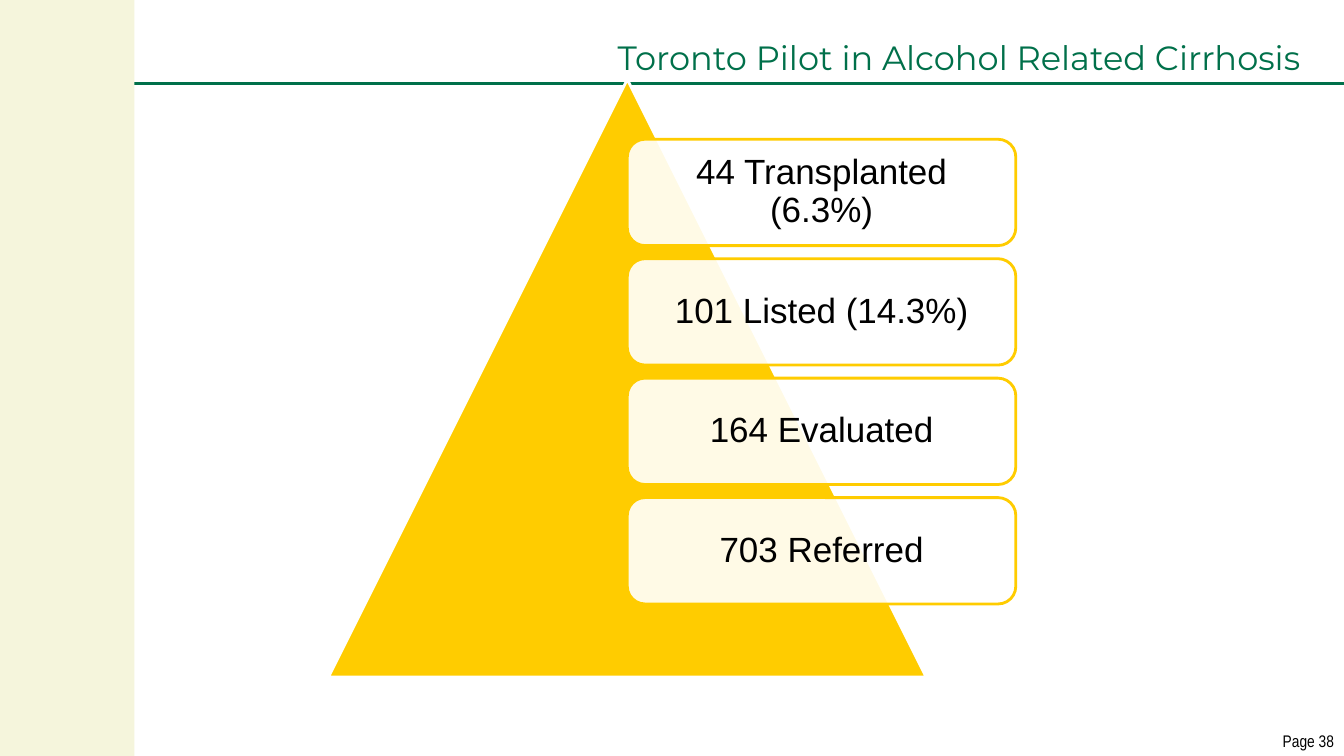
from dataclasses import dataclass

from lxml.etree import SubElement
from pptx import Presentation
from pptx.dml.color import RGBColor
from pptx.enum.shapes import MSO_CONNECTOR, MSO_SHAPE as Preset
from pptx.enum.text import MSO_ANCHOR as Anchor, PP_ALIGN as Align
from pptx.oxml.ns import qn
from pptx.util import Cm, Pt


@dataclass(frozen=True)
class Theme:
    green: RGBColor = RGBColor(0x00, 0x70, 0x4A)
    beige: RGBColor = RGBColor(0xF5, 0xF5, 0xDC)
    gold: RGBColor = RGBColor(0xFF, 0xCC, 0x00)
    white: RGBColor = RGBColor(0xFF, 0xFF, 0xFF)
    black: RGBColor = RGBColor(0x00, 0x00, 0x00)
    title_font: str = "Montserrat"
    body_font: str = "Arial"
    page_font: str = "Arial Narrow"
    title_size: float = 24
    body_size: float = 25
    page_size: float = 12
    outline: float = 2
    rule: float = 2.25


@dataclass(frozen=True)
class Frame:
    left: float
    top: float
    width: float
    height: float

    def lengths(self) -> tuple:
        return Cm(self.left), Cm(self.top), Cm(self.width), Cm(self.height)


@dataclass(frozen=True)
class Stage:
    label: str


THEME = Theme()
SLIDE_WIDTH, SLIDE_HEIGHT = 33.87, 19.05
SIDEBAR = Frame(0, 0, 3.39, SLIDE_HEIGHT)
TITLE = Frame(5.93, 0, 27.09, 2.09)
PYRAMID = Frame(8.28, 2, 15.06, 15.06)
FIRST_STAGE = Frame(15.81, 3.51, 9.79, 2.68)
PAGE_NUMBER = Frame(32, 18.29, 1.87, 0.76)
STAGE_PITCH = 3.01
RULE_TOP = 2.11
STAGES = (
    Stage("44 Transplanted (6.3%)"),
    Stage("101 Listed (14.3%)"),
    Stage("164 Evaluated"),
    Stage("703 Referred"),
)


def write(box, text: str, font: str, size: float, color: RGBColor,
          align: Align, spacing: float = 1.0) -> None:
    para = box.text_frame.paragraphs[0]
    para.alignment = align
    para.line_spacing = spacing
    span = para.add_run()
    span.text = text
    span.font.name = font
    span.font.size = Pt(size)
    span.font.color.rgb = color


def add_panel(page, preset: Preset, frame: Frame, fill: RGBColor,
              line: RGBColor | None = None):
    panel = page.shapes.add_shape(preset, *frame.lengths())
    panel.shadow.inherit = False
    panel.fill.solid()
    panel.fill.fore_color.rgb = fill
    if line is None:
        panel.line.fill.background()
    else:
        panel.line.color.rgb = line
        panel.line.width = Pt(THEME.outline)
    return panel


def add_rule(page) -> None:
    rule = page.shapes.add_connector(
        MSO_CONNECTOR.STRAIGHT, Cm(0), Cm(RULE_TOP), Cm(SLIDE_WIDTH), Cm(RULE_TOP))
    rule.line.color.rgb = THEME.green
    rule.line.width = Pt(THEME.rule)
    SubElement(rule._element.spPr, qn("a:effectLst"))


def set_title(page) -> None:
    title = page.shapes.title
    title.left, title.top, title.width, title.height = TITLE.lengths()
    title.text_frame.word_wrap = True
    title.text_frame.vertical_anchor = Anchor.BOTTOM
    write(title, "Toronto Pilot in Alcohol Related Cirrhosis", THEME.title_font,
          THEME.title_size, THEME.green, Align.RIGHT, 0.9)


def add_page_number(page) -> None:
    box = page.shapes.add_textbox(*PAGE_NUMBER.lengths())
    box.text_frame.word_wrap = False
    write(box, "Page 38", THEME.page_font, THEME.page_size, THEME.black, Align.RIGHT)


def add_stage(page, stage: Stage, index: int) -> None:
    frame = Frame(FIRST_STAGE.left, FIRST_STAGE.top + index * STAGE_PITCH,
                  FIRST_STAGE.width, FIRST_STAGE.height)
    panel = add_panel(page, Preset.ROUNDED_RECTANGLE, frame, THEME.white, THEME.gold)
    color = panel._element.spPr.find(qn("a:solidFill"))[0]
    SubElement(color, qn("a:alpha"), val="90000")
    body = panel.text_frame
    body.word_wrap = True
    body.vertical_anchor = Anchor.MIDDLE
    body.margin_left = body.margin_right = Cm(0.25)
    body.margin_top = body.margin_bottom = Cm(0.25)
    write(panel, stage.label, THEME.body_font, THEME.body_size, THEME.black,
          Align.CENTER, 0.9)


def main() -> None:
    deck = Presentation()
    deck.slide_width, deck.slide_height = Cm(SLIDE_WIDTH), Cm(SLIDE_HEIGHT)
    page = deck.slides.add_slide(deck.slide_layouts.get_by_name("Title Only"))
    add_rule(page)
    add_page_number(page)
    add_panel(page, Preset.RECTANGLE, SIDEBAR, THEME.beige)
    set_title(page)
    add_panel(page, Preset.ISOSCELES_TRIANGLE, PYRAMID, THEME.gold, THEME.white)
    for index, stage in enumerate(STAGES):
        add_stage(page, stage, index)
    deck.save("out.pptx")


if __name__ == "__main__":
    main()
